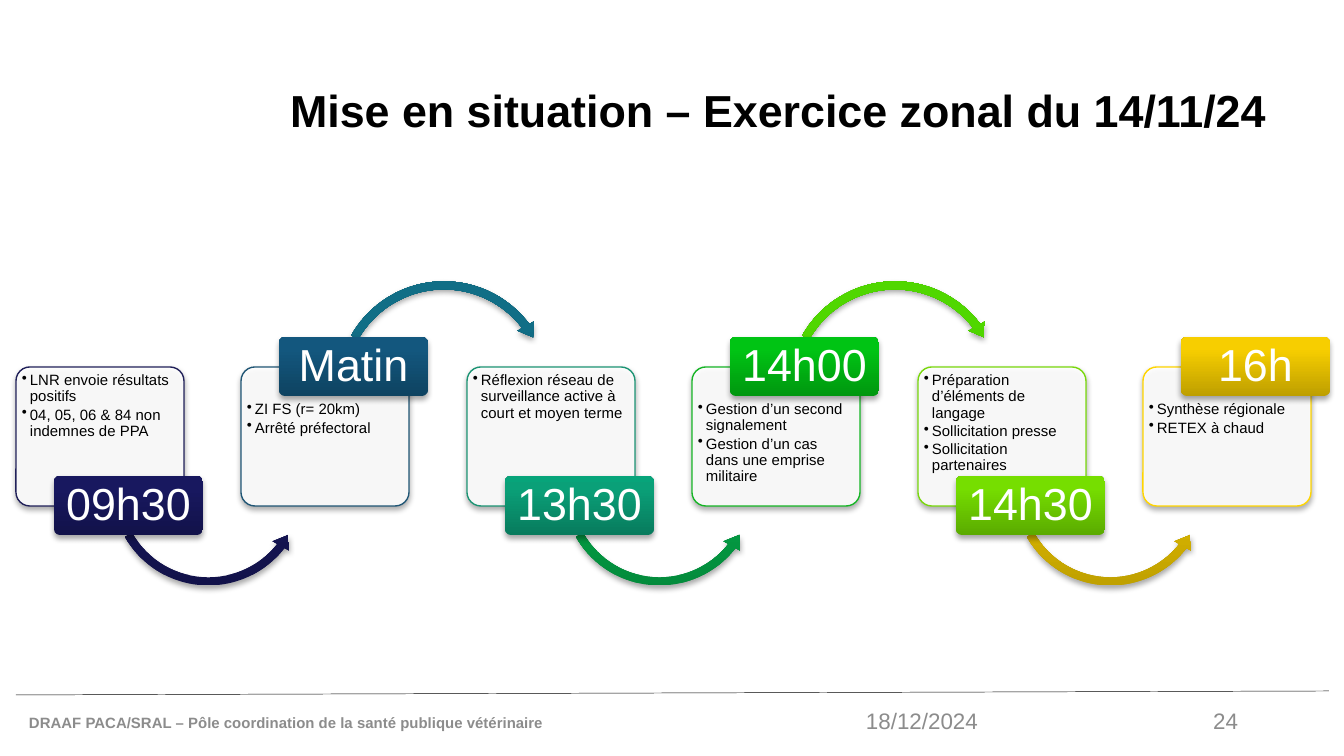
from lxml import etree
from pptx import Presentation
from pptx.dml.color import RGBColor
from pptx.enum.shapes import MSO_CONNECTOR, MSO_SHAPE
from pptx.enum.text import MSO_ANCHOR, PP_ALIGN
from pptx.oxml import parse_xml
from pptx.oxml.ns import nsdecls, qn
from pptx.util import Pt

PX = 914400 / 134.4
LEFT, CENTER, RIGHT = PP_ALIGN.LEFT, PP_ALIGN.CENTER, PP_ALIGN.RIGHT
TOP, MIDDLE = MSO_ANCHOR.TOP, MSO_ANCHOR.MIDDLE
ROUNDED = MSO_SHAPE.ROUNDED_RECTANGLE
ARC_OVER, ARC_UNDER = MSO_SHAPE.CIRCULAR_ARROW, MSO_SHAPE.LEFT_CIRCULAR_ARROW
GREY = "8C8C8C"
NAVY = ["12124A", "18185F", "161661"]
GOLD = ["BE9F00", "F7CE00", "F8CF00"]

deck = Presentation()
deck.slide_width, deck.slide_height = round(1344 * PX), round(756 * PX)
slide = deck.slides.add_slide(deck.slide_layouts[6])


def add_text(lines, box, size=8, color="000000", bold=False, align=LEFT,
             anchor=MIDDLE, inset=(13, 7), spacing=1.0, after=0, bullet=False):
    frame = slide.shapes.add_textbox(*[round(v * PX) for v in box]).text_frame
    frame.word_wrap = True
    frame.vertical_anchor = anchor
    frame.margin_left = frame.margin_right = round(inset[0] * PX)
    frame.margin_top = frame.margin_bottom = round(inset[1] * PX)
    for i, line in enumerate(lines):
        paragraph = frame.paragraphs[0] if i == 0 else frame.add_paragraph()
        if bullet:
            props = paragraph._p.get_or_add_pPr()
            props.set("marL", str(round(8 * PX)))
            props.set("indent", str(round(-8 * PX)))
            etree.SubElement(props, qn("a:buChar")).set("char", "•")
        paragraph.alignment = align
        paragraph.line_spacing = spacing
        paragraph.space_after = Pt(after)
        run = paragraph.add_run()
        run.text = line
        run.font.name, run.font.size, run.font.bold = "Arial", Pt(size), bold
        run.font.color.rgb = RGBColor.from_string(color)


def add_raised(kind, box, adjustments, gradient=None, outline=None):
    shape = slide.shapes.add_shape(kind, *[round(v * PX) for v in box])
    for i, value in enumerate(adjustments):
        shape.adjustments[i] = value
    props = shape._element.spPr
    if gradient:
        stops = "".join(
            f'<a:gs pos="{position}"><a:srgbClr val="{color}"/></a:gs>'
            for position, color in zip((0, 80000, 100000), gradient))
        props.append(parse_xml(
            f'<a:gradFill {nsdecls("a")} rotWithShape="1"><a:gsLst>{stops}</a:gsLst>'
            '<a:lin ang="16200000" scaled="0"/></a:gradFill>'))
        shape.line.fill.background()
    else:
        props.append(parse_xml(
            f'<a:solidFill {nsdecls("a")}><a:srgbClr val="FFFFFF">'
            '<a:alpha val="90000"/></a:srgbClr></a:solidFill>'))
        shape.line.color.rgb = RGBColor.from_string(outline)
        shape.line.width = Pt(0.75)
    props.append(parse_xml(
        f'<a:effectLst {nsdecls("a")}><a:outerShdw blurRad="40000" dist="23000" '
        'dir="5400000" rotWithShape="0"><a:srgbClr val="000000">'
        '<a:alpha val="35000"/></a:srgbClr></a:outerShdw></a:effectLst>'))


footer_rule = slide.shapes.add_connector(
    MSO_CONNECTOR.STRAIGHT, *[round(v * PX) for v in (16, 695, 1329, 691)])
footer_rule.line.color.rgb = RGBColor.from_string("000000")
footer_rule.line.width = Pt(0.25)
etree.SubElement(footer_rule._element.spPr, qn("a:effectLst"))

add_text(["DRAAF PACA/SRAL – Pôle coordination de la santé publique vétérinaire"],
         (16, 703, 555, 40), color=GREY, bold=True)
add_text(["24"], (1168, 701, 83, 40), size=12, color=GREY, align=RIGHT)
add_text(["Mise en situation – Exercice zonal du 14/11/24"],
         (277, 40, 1067, 147), size=24, bold=True, spacing=0.9)
add_text(["18/12/2024"], (853, 701, 147, 40), size=12, color=GREY)

steps = [
    ("09h30", ["LNR envoie résultats positifs", "04, 05, 06 & 84 non indemnes de PPA"],
     "21215A", NAVY, NAVY),
    ("Matin", ["ZI FS (r= 20km)", "Arrêté préfectoral"],
     "205675", ["0E4361", "13577E", "115881"], ["0D5567", "116E86", "0F7089"]),
    ("13h30", ["Réflexion réseau de surveillance active à court et moyen terme"],
     "1C9474", ["087B5D", "0AA078", "07A47A"], ["038A3B", "04B34D", "01B74D"]),
    ("14h00", ["Gestion d’un second signalement",
               "Gestion d’un cas dans une emprise militaire"],
     "16B526", ["00970F", "00C414", "00C514"], ["3EA600", "50D700", "51D800"]),
    ("14h30", ["Préparation d’éléments de langage", "Sollicitation presse",
               "Sollicitation partenaires"],
     "79D80C", ["5BAB00", "76DE00", "76DF00"], GOLD),
    ("16h", ["Synthèse régionale", "RETEX à chaud"], "FFD500", GOLD, None),
]

for index, (time, actions, outline, time_fill, arc_fill) in enumerate(steps):
    x = 16 + round(index * 1127 / 5)
    time_on_top = index % 2 == 1
    time_y = 337 if time_on_top else 476
    add_raised(ROUNDED, (x, 367, 168, 139), [0.1], outline=outline)
    add_text(actions, (x + 3, 399 if time_on_top else 370, 162, 102), anchor=TOP,
             inset=(3, 3), spacing=0.9, after=1.2, bullet=True)
    if arc_fill and time_on_top:
        add_raised(ARC_OVER, (x + 91, 276, 224, 224),
                   [0.036, 4.519, 193.726, 125.755, 0.042], gradient=arc_fill)
    elif arc_fill:
        add_raised(ARC_UNDER, (x + 91, 388, 203, 203),
                   [0.04, 5.044, 22.799, 90.245, 0.047], gradient=arc_fill)
    add_raised(ROUNDED, (x + 38, time_y, 149, 59), [0.1], gradient=time_fill)
    add_text([time], (x + 40, time_y + 2, 145, 56), size=24, color="FFFFFF",
             align=CENTER, inset=(6, 4), spacing=0.9)

deck.save("out.pptx")
